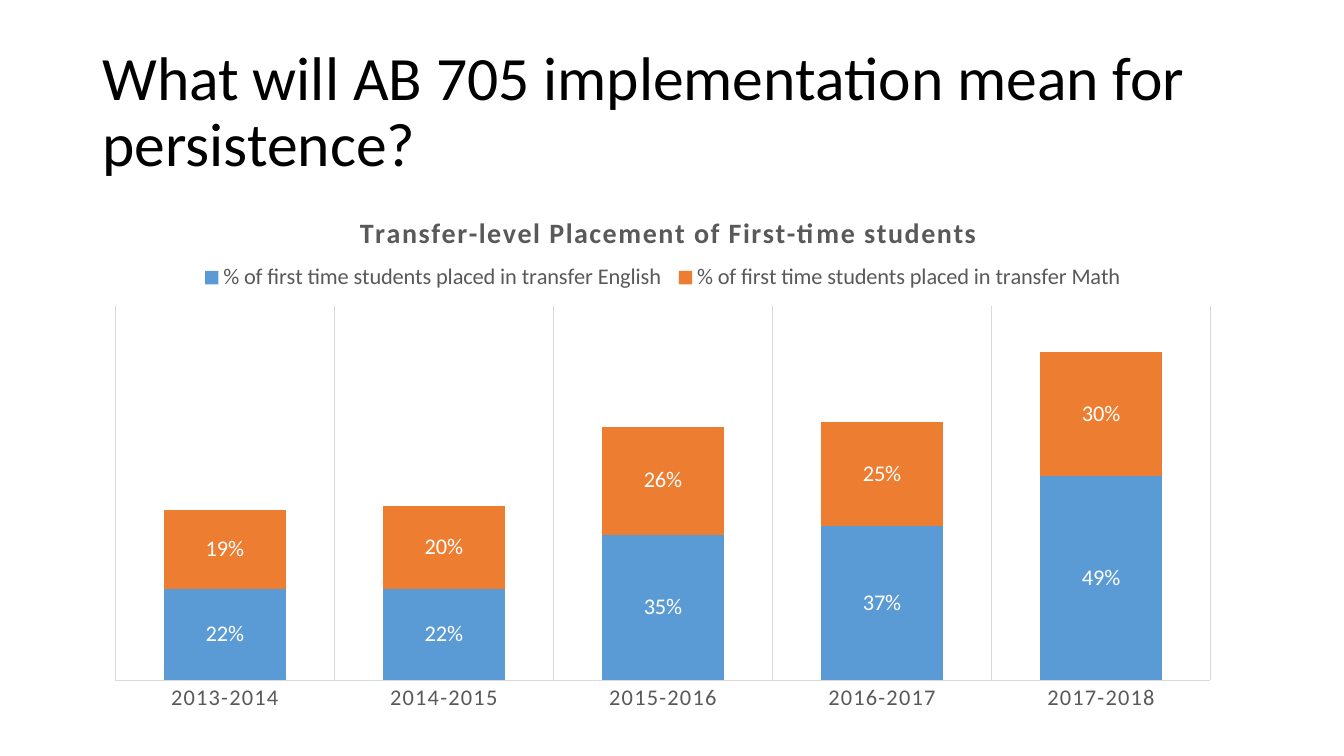
from dataclasses import dataclass

from lxml import etree
from pptx import Presentation
from pptx import util as u
from pptx.chart.chart import Chart
from pptx.chart.data import CategoryChartData
from pptx.dml.color import RGBColor
from pptx.enum import chart as ch
from pptx.enum import text as t
from pptx.oxml.ns import qn
from pptx.slide import Slide
from pptx.text.text import Font


@dataclass(frozen=True)
class Theme:
    font: str = "Calibri"
    black: str = "000000"
    white: str = "FFFFFF"
    grey: str = "595959"
    rule: str = "D9D9D9"
    heading_size: int = 44
    chart_title_size: int = 20
    chart_size: int = 16
    letter_spacing: str = "100"


@dataclass(frozen=True)
class Placement:
    name: str
    shares: tuple[float, ...]
    color: str


@dataclass(frozen=True)
class Box:
    x: float
    y: float
    w: float
    h: float


THEME = Theme()
YEARS = [f"{year}-{year + 1}" for year in range(2013, 2018)]
PLACEMENTS = [
    Placement("% of first time students placed in transfer English",
              (0.22, 0.22, 0.35, 0.37, 0.49), "5B9BD5"),
    Placement("% of first time students placed in transfer Math",
              (0.19, 0.20, 0.26, 0.25, 0.30), "ED7D31"),
]
HEADING_BOX = Box(66, 28.8, 828, 104.4)
CHART_BOX = Box(66, 133.2, 815, 383)


def in_points(box: Box) -> tuple[u.Length, ...]:
    return u.Pt(box.x), u.Pt(box.y), u.Pt(box.w), u.Pt(box.h)


def style_font(font: Font, size: int, color: str, bold: bool = False) -> None:
    font.name = THEME.font
    font.size = u.Pt(size)
    font.bold = bold
    font.color.rgb = RGBColor.from_string(color)


def place_part(chart: Chart, part: str, box: Box, after: str = "",
               inner: bool = False) -> None:
    """Fix a chart part at fractions of the chart area."""
    parent = chart.element.xpath(f"c:chart/{part}")[0]
    for stale in parent.findall(qn("c:layout")):
        parent.remove(stale)
    layout = etree.Element(qn("c:layout"))
    manual = etree.SubElement(layout, qn("c:manualLayout"))
    settings = [("layoutTarget", "inner")] if inner else []
    settings += [("xMode", "edge"), ("yMode", "edge")]
    settings += [(key, str(getattr(box, key))) for key in "xywh"]
    for tag, value in settings:
        etree.SubElement(manual, qn(f"c:{tag}")).set("val", value)
    if after:
        parent.find(qn(after)).addnext(layout)
    else:
        parent.insert(0, layout)


def add_heading(slide: Slide) -> None:
    frame = slide.shapes.add_textbox(*in_points(HEADING_BOX)).text_frame
    frame.word_wrap = True
    frame.vertical_anchor = t.MSO_ANCHOR.MIDDLE
    paragraph = frame.paragraphs[0]
    paragraph.line_spacing = 0.9
    heading = paragraph.add_run()
    heading.text = "What will AB 705 implementation mean for persistence?"
    style_font(heading.font, THEME.heading_size, THEME.black)


def style_axes(chart: Chart) -> None:
    years = chart.category_axis
    years.major_tick_mark = years.minor_tick_mark = ch.XL_TICK_MARK.NONE
    years.has_major_gridlines = True
    for line in (years.format.line, years.major_gridlines.format.line):
        line.color.rgb = RGBColor.from_string(THEME.rule)
        line.width = u.Pt(0.75)
    style_font(years.tick_labels.font, THEME.chart_size, THEME.grey)
    for properties in chart.element.xpath(".//c:catAx/c:txPr//a:defRPr"):
        properties.set("spc", THEME.letter_spacing)

    shares = chart.value_axis
    shares.minimum_scale, shares.maximum_scale = 0, 0.9
    shares.has_major_gridlines = False
    shares.visible = False


def style_bars(chart: Chart) -> None:
    plot = chart.plots[0]
    plot.gap_width, plot.overlap = 79, 100
    plot.vary_by_categories = False
    for series, placement in zip(plot.series, PLACEMENTS):
        series.format.fill.solid()
        series.format.fill.fore_color.rgb = RGBColor.from_string(placement.color)
        labels = series.data_labels
        labels.show_value = True
        labels.number_format = "0%"
        labels.number_format_is_linked = False
        labels.position = ch.XL_LABEL_POSITION.CENTER
        style_font(labels.font, THEME.chart_size, THEME.white)


def add_placement_chart(slide: Slide) -> None:
    data = CategoryChartData(number_format="0%")
    data.categories = YEARS
    for placement in PLACEMENTS:
        data.add_series(placement.name, placement.shares)
    chart = slide.shapes.add_chart(
        ch.XL_CHART_TYPE.COLUMN_STACKED, *in_points(CHART_BOX), data).chart
    style_font(chart.font, THEME.chart_size, THEME.black)

    chart.has_title = True
    chart_title = chart.chart_title.text_frame.paragraphs[0].add_run()
    chart_title.text = "Transfer-level Placement of First-time students"
    style_font(chart_title.font, THEME.chart_title_size, THEME.grey, bold=True)
    for properties in chart.element.xpath("c:chart/c:title//a:rPr"):
        properties.set("spc", THEME.letter_spacing)

    chart.has_legend = True
    chart.legend.position = ch.XL_LEGEND_POSITION.TOP
    chart.legend.include_in_layout = False
    style_font(chart.legend.font, THEME.chart_size, THEME.grey)

    style_axes(chart)
    style_bars(chart)
    place_part(chart, "c:title", Box(0.23, 0.04, 0.54, 0.07), after="c:tx")
    place_part(chart, "c:legend", Box(0.09, 0.14, 0.82, 0.06), after="c:legendPos")
    place_part(chart, "c:plotArea", Box(0.02, 0.223, 0.96, 0.698), inner=True)


def main() -> None:
    deck = Presentation()
    deck.slide_width, deck.slide_height = u.Pt(960), u.Pt(540)
    slide = deck.slides.add_slide(deck.slide_layouts[6])
    add_heading(slide)
    add_placement_chart(slide)
    deck.save("out.pptx")


if __name__ == "__main__":
    main()
